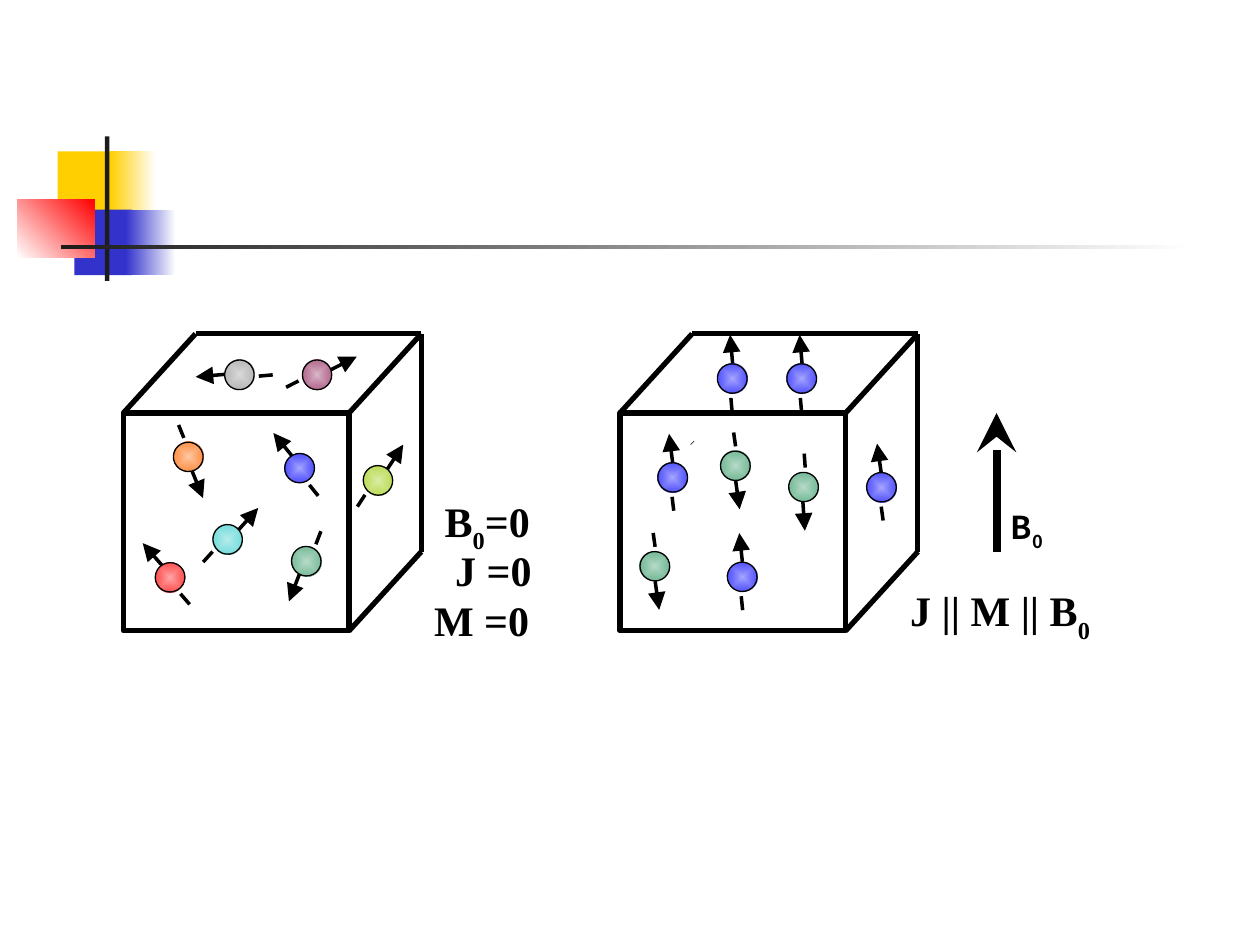
from math import cos, radians, sin

from lxml.etree import SubElement
from pptx import Presentation
from pptx.dml.color import RGBColor
from pptx.enum.shapes import MSO_CONNECTOR, MSO_SHAPE
from pptx.oxml.ns import qn
from pptx.util import Pt

rgb = RGBColor.from_string

prs = Presentation()
prs.slide_width, prs.slide_height = Pt(720), Pt(540)
slide = prs.slides.add_slide(prs.slide_layouts[6])


def add_block(preset, left, top, width, height, colors, angle=0, outline=None):
    block = slide.shapes.add_shape(preset, Pt(left), Pt(top), Pt(width), Pt(height))
    block.shadow.inherit = False
    if len(colors) == 1:
        block.fill.solid()
        block.fill.fore_color.rgb = rgb(colors[0])
    else:
        block.fill.gradient()
        block.fill.gradient_angle = angle
        for stop, position, color in zip(block.fill.gradient_stops, (0, 1), colors):
            stop.position = position
            stop.color.rgb = rgb(color)
    if outline:
        block.line.color.rgb = rgb("000000")
        block.line.width = Pt(outline)
    else:
        block.line.fill.background()
    return block


def add_line(start, end, width, head=None):
    line = slide.shapes.add_connector(
        MSO_CONNECTOR.STRAIGHT, Pt(start[0]), Pt(start[1]), Pt(end[0]), Pt(end[1]))
    line.line.color.rgb = rgb("000000")
    line.line.width = Pt(width)
    if head:
        SubElement(line.line._get_or_add_ln(), qn("a:tailEnd"), type=head, w="lg", len="lg")
    SubElement(line._element.spPr, qn("a:effectLst"))


for left, top, width, height, colors, angle in [
    (33, 86.5, 34.5, 37.5, ["FFCF01"], 0),
    (63, 86.5, 26, 37.5, ["FFCF01", "FFFFFF"], 0),
    (42.5, 119.75, 33, 37.5, ["3333CC"], 0),
    (72, 119.75, 28.5, 37.5, ["3333CC", "FFFFFF"], 0),
    (10, 113.75, 44, 33.5, ["FFFFFF", "FF0000"], 45),
    (60, 78, 2.5, 82.5, ["1C1C1C"], 0),
    (35, 140.1, 648, 2.5, ["1C1C1C", "FFFFFF"], 0),
]:
    add_block(MSO_SHAPE.RECTANGLE, left, top, width, height, colors, angle)

cube_top, cube_width, cube_height = 236, 129, 124.5
depth_x, depth_y = 41.25, 45.25
for left in (70.5, 354.25):
    right, bottom = left + cube_width, cube_top + cube_height
    back_left = (left + depth_x, cube_top - depth_y)
    back_right = (right + depth_x, cube_top - depth_y)
    back_bottom = (right + depth_x, bottom - depth_y)
    add_block(MSO_SHAPE.RECTANGLE, left, cube_top, cube_width, cube_height,
              ["FFFFFF"], outline=3)
    for start, end in [
        (back_left, (left, cube_top)),
        (back_right, (right, cube_top)),
        (back_bottom, (right, bottom)),
        (back_left, back_right),
        (back_bottom, back_right),
    ]:
        add_line(start, end, 3)

blue, green = ("AAAAFF", "0000FF"), ("BBDDCC", "339966")
spins = [
    (171.2, 267.5, 231, blue),
    (136.8, 214.2, 175, ("DCDCDC", "969696")),
    (181.2, 214.2, 333, ("DDBBCC", "993366")),
    (175, 320.7, 111, green),
    (107.6, 261.1, 68, ("FFCCAA", "FF6600")),
    (97.2, 329.9, 229, ("FFAAAA", "FF0000")),
    (130.1, 308.2, 312, ("BBEEEE", "33CCCC")),
    (216, 274.5, 303, ("DDEEAA", "99CC00")),
    (384.4, 272.8, 263, blue),
    (420.2, 266.2, 82, green),
    (459.2, 278.3, 86, green),
    (374.2, 323.6, 82, green),
    (424.1, 329.6, 264, blue),
    (503.7, 278.4, 262, blue),
    (418.4, 216.3, 265, blue),
    (458.1, 216.3, 265, blue),
]
ball_width, ball_height = 17, 16.75
for x, y, heading, colors in spins:
    ball = add_block(MSO_SHAPE.OVAL, x - ball_width / 2, y - ball_height / 2,
                     ball_width, ball_height, colors, outline=0.75)
    ball.rotation = (heading - 64) % 360
    gradient = ball._element.spPr.find(qn("a:gradFill"))
    SubElement(gradient.findall(".//" + qn("a:srgbClr"))[1], qn("a:alpha"), val="72000")
    gradient.remove(gradient.find(qn("a:lin")))
    radial = SubElement(gradient, qn("a:path"), path="shape")
    SubElement(radial, qn("a:fillToRect"), l="50000", t="50000", r="50000", b="50000")

    dx, dy = cos(radians(heading)), sin(radians(heading))
    for near, far, shift, head in [(8.5, 25, 1, "triangle"), (-19, -11, -1.7, None)]:
        start, end = [(x + along * dx - shift * dy, y + along * dy + shift * dx)
                      for along in (near, far)]
        add_line(start, end, 2, head)

add_line((396.7, 252), (394.6, 254.2), 0.25)
add_line((569.5, 315.5), (569.5, 236), 4.5, "stealth")

serif = "Times New Roman"
for left, top, width, height, size, font, parts in [
    (247, 279.5, 91, 36, 24, serif, ["B", "0", "=0"]),
    (253, 307.5, 85, 36, 24, serif, ["J =0"]),
    (241, 336, 91, 36, 24, serif, ["M =0"]),
    (513, 330.5, 136, 36, 24, serif, ["J || M || B", "0"]),
    (570.5, 286.5, 33, 29, 18, "Noto Sans CJK KR", ["B", "0"]),
]:
    label = slide.shapes.add_textbox(Pt(left), Pt(top), Pt(width), Pt(height))
    label.text_frame.word_wrap = font == serif
    paragraph = label.text_frame.paragraphs[0]
    paragraph.font.name = font
    paragraph.font.size = Pt(size)
    paragraph.font.bold = True
    paragraph.font.color.rgb = rgb("000000")
    for part in parts:
        run = paragraph.add_run()
        run.text = part
        if part == "0":
            run._r.get_or_add_rPr().set("baseline", "-30000")

prs.save("out.pptx")
